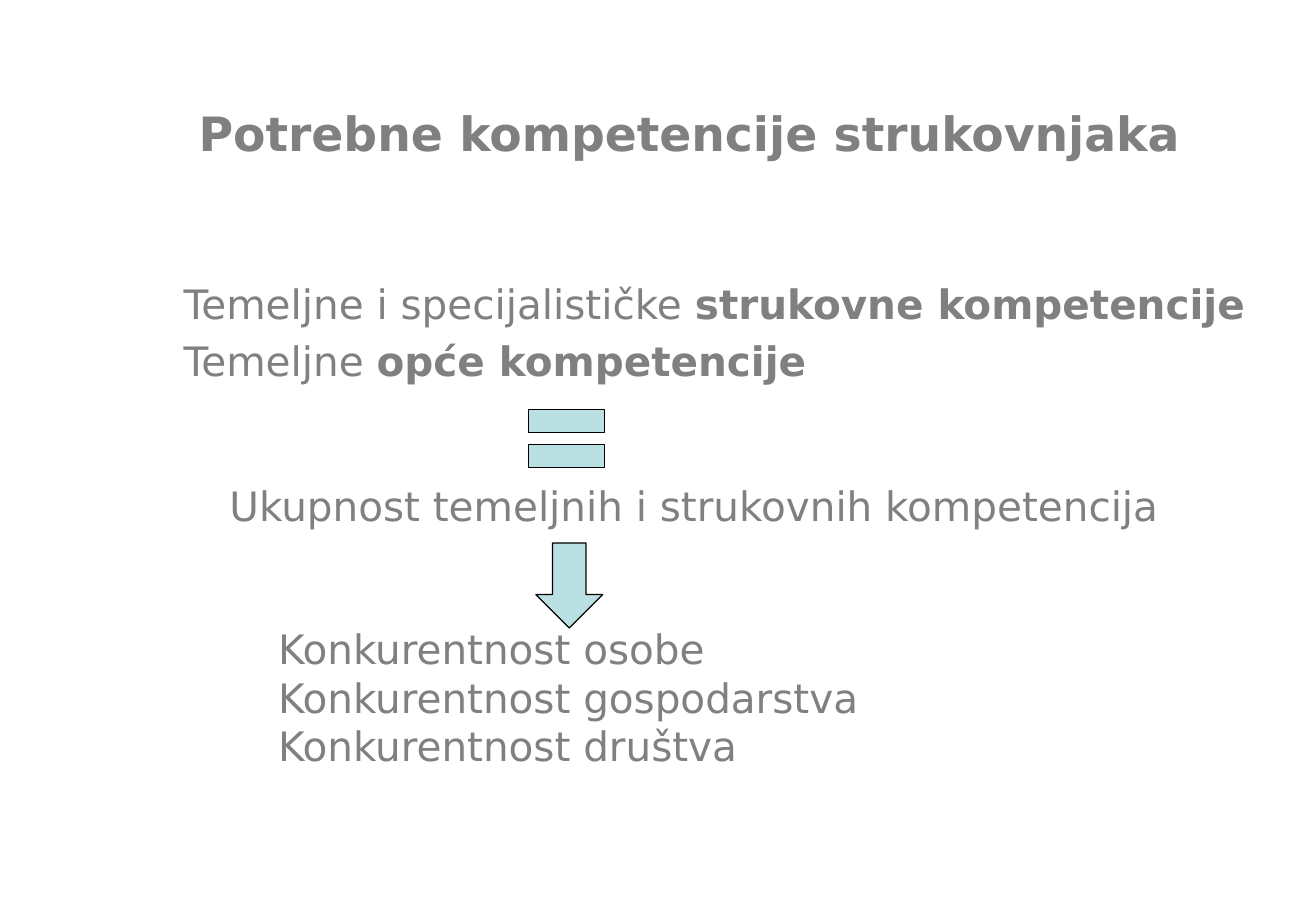
from pptx import Presentation
from pptx.dml.color import RGBColor
from pptx.enum.shapes import MSO_SHAPE as Shape
from pptx.enum.text import MSO_ANCHOR as Anchor, MSO_AUTO_SIZE as AutoSize, PP_ALIGN as Align
from pptx.oxml.ns import qn
from pptx.util import Inches, Pt

GREY = RGBColor(0x80, 0x80, 0x80)
AQUA = RGBColor(0xBB, 0xE0, 0xE3)
BLACK = RGBColor(0, 0, 0)
FONT = "DejaVu Sans"
WIDTH, HEIGHT = Inches(10.83), Inches(7.5)


def place(item, box):
    left, top, width, height = box
    item.left, item.width = (round(WIDTH * share / 100) for share in (left, width))
    item.top, item.height = (round(HEIGHT * share / 100) for share in (top, height))


def write(frame, lines, size=24, align=Align.LEFT, gap=0, indent=0):
    frame.word_wrap = True
    frame.auto_size = AutoSize.NONE
    frame.vertical_anchor = Anchor.TOP
    for index, spans in enumerate(lines):
        para = frame.paragraphs[0] if index == 0 else frame.add_paragraph()
        props = para._p.get_or_add_pPr()
        props.set("marL", str(Inches(indent)))
        props.set("indent", "0")
        props.append(props.makeelement(qn("a:buNone"), {}))
        para.alignment = align
        para.space_before = Pt(gap if index else 0)
        for text, bold in spans:
            span = para.add_run()
            span.text = text
            span.font.name = FONT
            span.font.size = Pt(size)
            span.font.bold = bold
            span.font.color.rgb = GREY


def add_title(page, box):
    place(page.shapes.title, box)
    write(page.shapes.title.text_frame, [[("Potrebne kompetencije strukovnjaka", True)]],
          size=28, align=Align.CENTER)


def add_competences(page, box):
    body = page.placeholders[1]
    place(body, box)
    lines = [
        [("Temeljne i specijalističke ", False), ("strukovne kompetencije", True)],
        [("Temeljne ", False), ("opće kompetencije", True)],
    ]
    write(body.text_frame, lines, gap=4.8, indent=0.09)


def add_statement(page, box, lines):
    statement = page.shapes.add_textbox(0, 0, 0, 0)
    place(statement, box)
    write(statement.text_frame, [[(line, False)] for line in lines])


def add_symbol(page, box, kind):
    symbol = page.shapes.add_shape(kind, 0, 0, 0, 0)
    place(symbol, box)
    symbol.shadow.inherit = False
    symbol.fill.solid()
    symbol.fill.fore_color.rgb = AQUA
    symbol.line.color.rgb = BLACK
    symbol.line.width = Pt(0.75)


def main():
    deck = Presentation()
    deck.slide_width, deck.slide_height = WIDTH, HEIGHT
    page = deck.slides.add_slide(deck.slide_layouts[1])
    add_title(page, (13.11, 10.8, 78.49, 8.8))
    add_competences(page, (12.19, 30, 86.52, 13.2))
    add_symbol(page, (39.15, 42.67, 7.85, 10.93), Shape.MATH_EQUAL)
    add_statement(page, (16.53, 52.13, 79.96, 6.67),
                  ["Ukupnost temeljnih i strukovnih kompetencija"])
    add_symbol(page, (40.72, 59.6, 5.08, 9.33), Shape.DOWN_ARROW)
    add_statement(page, (20.22, 67.87, 66.85, 17.47),
                  [f"Konkurentnost {bearer}" for bearer in ("osobe", "gospodarstva", "društva")])
    deck.save("out.pptx")


if __name__ == "__main__":
    main()
